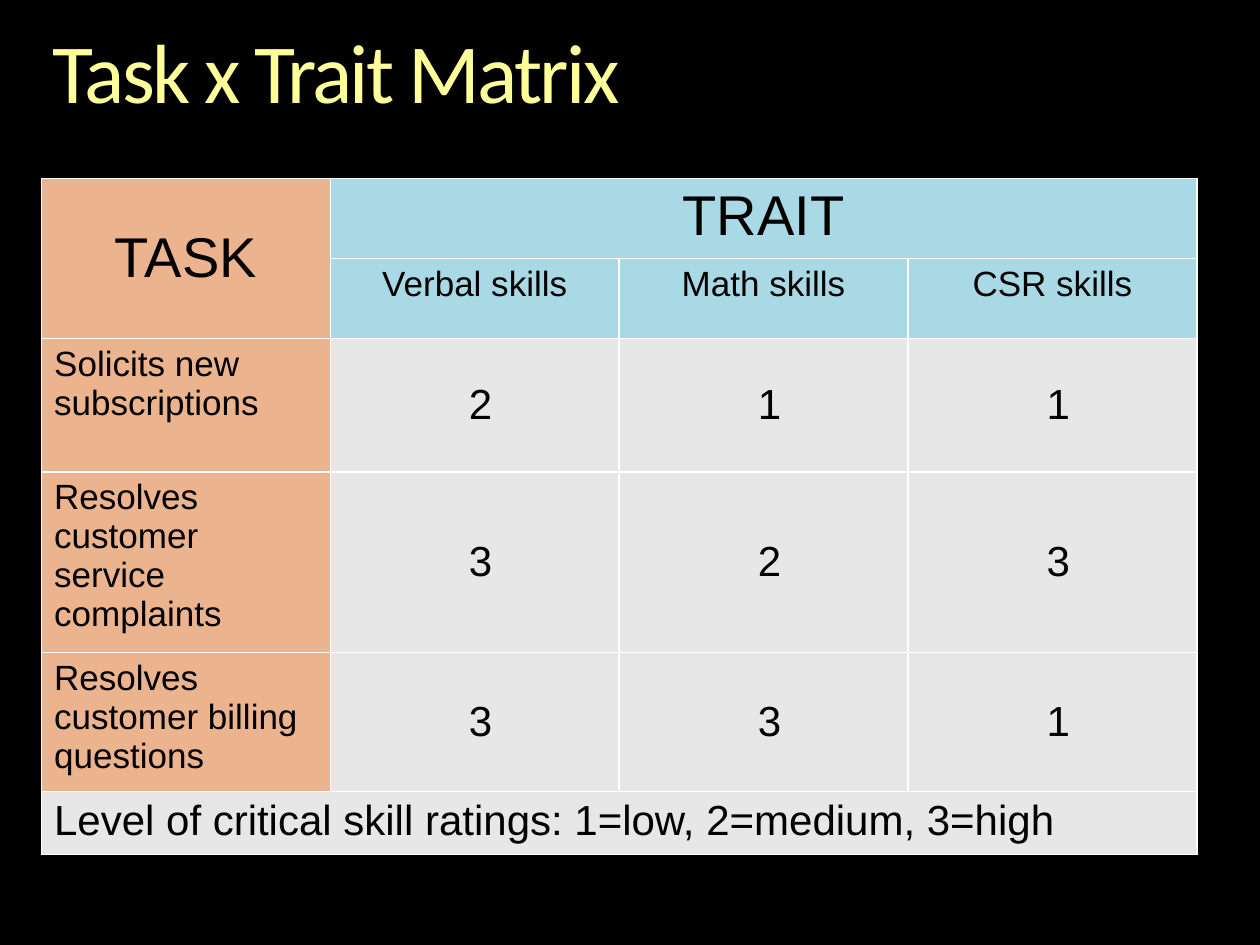
from dataclasses import dataclass

import pptx
import pptx.dml.color
import pptx.enum.text
import pptx.oxml
import pptx.oxml.ns
import pptx.util

ALIGN = pptx.enum.text.PP_ALIGN
ANCHOR = pptx.enum.text.MSO_ANCHOR
INCH = pptx.util.Inches


@dataclass(frozen=True)
class Theme:
    background: str = "000000"
    title: str = "FFFF99"
    text: str = "000000"
    border: str = "FFFFFF"
    task: str = "ECB38F"
    trait: str = "A8D9E5"
    rating: str = "E7E7E7"
    title_font: str = "Calibri"
    body_font: str = "Arial"
    title_size: int = 48
    head_size: int = 32
    label_size: int = 20
    rating_size: int = 24


def rgb(value):
    return pptx.dml.color.RGBColor.from_string(value)


class Deck:
    def __init__(self, theme, width=10, height=7.5):
        self.theme = theme
        self.prs = pptx.Presentation()
        self.prs.slide_width, self.prs.slide_height = INCH(width), INCH(height)
        self.s = self.prs.slides.add_slide(self.prs.slide_layouts[6])
        fill = self.s.background.fill
        fill.solid()
        fill.fore_color.rgb = rgb(theme.background)

    def place(self, x, y, w, h):
        """Turn shares of the slide's size into lengths."""
        width, height = self.prs.slide_width, self.prs.slide_height
        return [round(v) for v in (x * width, y * height, w * width, h * height)]

    def run(self, p, text, size, font, color):
        r = p.add_run()
        r.text = text
        r.font.size = pptx.util.Pt(size)
        r.font.name = font
        r.font.color.rgb = rgb(color)
        return r

    def title(self, text, box):
        t = self.theme
        tf = self.s.shapes.add_textbox(*self.place(*box)).text_frame
        tf.word_wrap = True
        tf.margin_left = tf.margin_top = tf.margin_right = tf.margin_bottom = 0
        p = tf.paragraphs[0]
        p.line_spacing = 0.9
        r = self.run(p, text, t.title_size, t.title_font, t.title)
        r.font._element.set("spc", "-150")

    def table(self, box, columns, row_heights):
        x, y, w, h = self.place(*box)
        table = self.s.shapes.add_table(len(row_heights), columns, x, y, w, h).table
        table.first_row = table.horz_banding = False
        for column in table.columns:
            column.width = w // columns
        for row, share in zip(table.rows, row_heights):
            row.height = round(h * share / sum(row_heights))
        for cell in table.iter_cells():
            self.border(cell)
        return table

    def border(self, cell):
        for side in ("lnL", "lnR", "lnT", "lnB"):
            cell._tc.get_or_add_tcPr().append(pptx.oxml.parse_xml(
                f'<a:{side} {pptx.oxml.ns.nsdecls("a")} w="12700"><a:solidFill>'
                f'<a:srgbClr val="{self.theme.border}"/></a:solidFill></a:{side}>'))

    def cell(self, cell, text, fill, size, align=None, middle=False, indent=0):
        cell.fill.solid()
        cell.fill.fore_color.rgb = rgb(fill)
        cell.vertical_anchor = ANCHOR.MIDDLE if middle else ANCHOR.TOP
        p = cell.text_frame.paragraphs[0]
        if indent:
            p.level = 2
            pPr = p._p.get_or_add_pPr()
            pPr.set("marL", str(INCH(indent)))
            pPr.set("indent", "0")
        if align:
            p.alignment = align
        self.run(p, text, size, self.theme.body_font, self.theme.text)


TRAITS = ["Verbal skills", "Math skills", "CSR skills"]
RATINGS = {
    "Solicits new subscriptions": [2, 1, 1],
    "Resolves customer service complaints": [3, 2, 3],
    "Resolves customer billing questions": [3, 3, 1],
}


def main():
    t = Theme()
    deck = Deck(t)
    deck.title("Task x Trait Matrix", (0.042, 0.033, 0.917, 0.097))

    table = deck.table((0.033, 0.189, 0.917, 0.68), 1 + len(TRAITS),
                       [0.6, 0.6, 1.06, 1.34, 1.03, 0.47])
    last = len(table.rows) - 1
    table.cell(0, 0).merge(table.cell(1, 0))
    table.cell(0, 1).merge(table.cell(0, len(TRAITS)))
    table.cell(last, 0).merge(table.cell(last, len(TRAITS)))

    deck.cell(table.cell(0, 0), "TASK", t.task, t.head_size, ALIGN.CENTER, middle=True)
    deck.cell(table.cell(0, 1), "TRAIT", t.trait, t.head_size, ALIGN.CENTER)
    for col, trait in enumerate(TRAITS, 1):
        deck.cell(table.cell(1, col), trait, t.trait, t.label_size, ALIGN.CENTER)
    for row, (task, ratings) in enumerate(RATINGS.items(), 2):
        deck.cell(table.cell(row, 0), task, t.task, t.label_size)
        for col, rating in enumerate(ratings, 1):
            deck.cell(table.cell(row, col), str(rating), t.rating, t.rating_size,
                      middle=True, indent=1)
    deck.cell(table.cell(last, 0), "Level of critical skill ratings: 1=low, 2=medium, 3=high",
              t.rating, t.rating_size)

    deck.prs.save("out.pptx")


if __name__ == "__main__":
    main()
